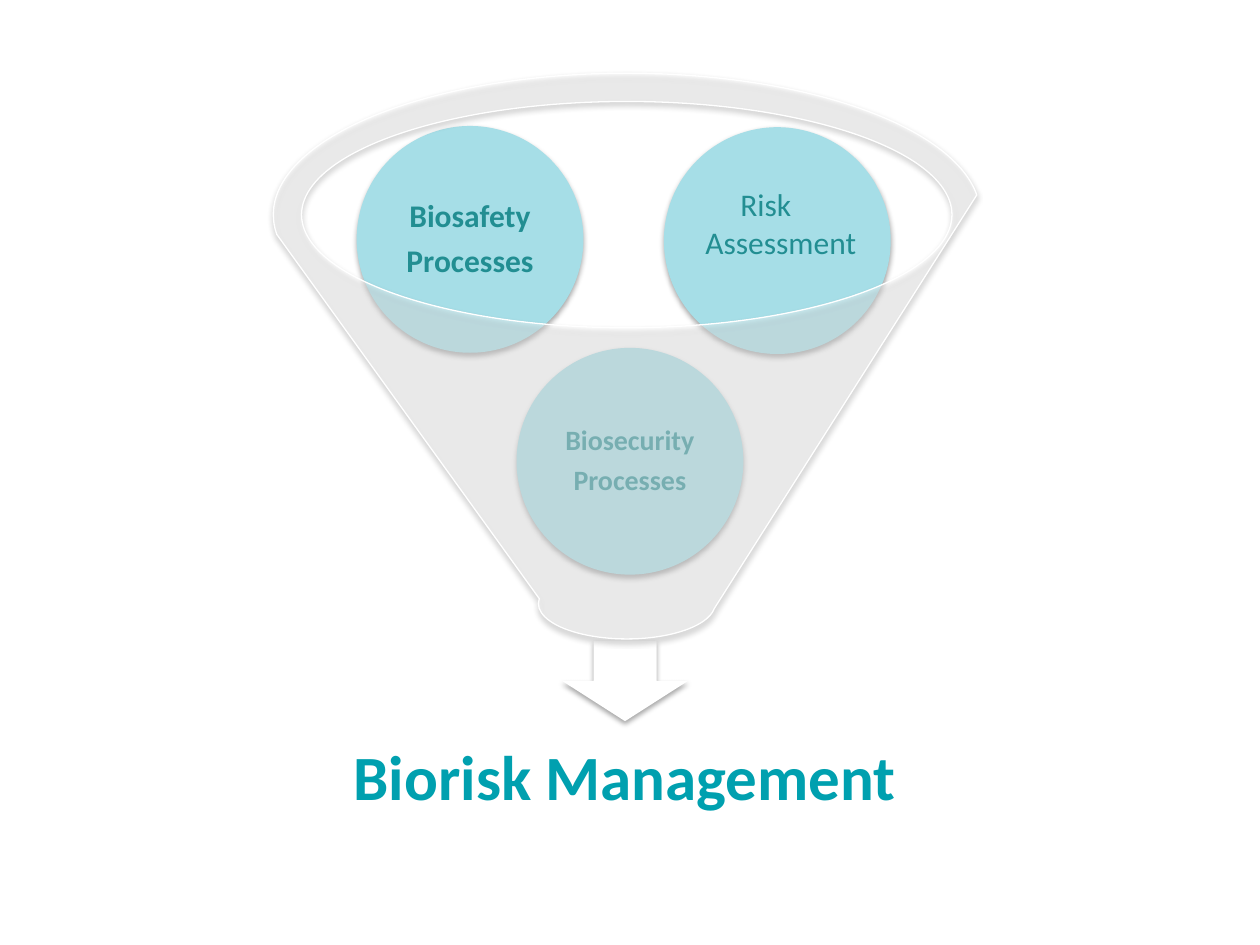
import pptx
import pptx.util
import pptx.oxml
from pptx.dml.color import RGBColor
from pptx.enum.shapes import MSO_SHAPE
from pptx.enum.text import MSO_ANCHOR, PP_ALIGN
from pptx.oxml.ns import nsdecls, qn
from lxml import etree

Pt = pptx.util.Pt


class Theme:
    font = "Calibri"
    white = RGBColor.from_string("FFFFFF")
    ball = RGBColor.from_string("A6DEE7")
    label = RGBColor.from_string("228E92")
    title = RGBColor.from_string("00A0AF")
    glass = 40  # opacity of the funnel, percent
    title_size, label_size, small_size = 36, 18, 16


SHADOW = (
    f'<a:effectLst {nsdecls("a")}>'
    '<a:outerShdw blurRad="39370" dist="22860" dir="5400000" rotWithShape="0">'
    '<a:srgbClr val="000000"><a:alpha val="35000"/></a:srgbClr>'
    "</a:outerShdw></a:effectLst>"
)


def add_shape(s, kind, box, color, opacity=None, line=None, shadow=True):
    sp = s.shapes.add_shape(kind, *map(Pt, box))
    sp.fill.solid()
    sp.fill.fore_color.rgb = color
    if opacity is not None:
        clr = sp._element.spPr.find(qn("a:solidFill"))[0]
        etree.SubElement(clr, qn("a:alpha")).set("val", str(opacity * 1000))
    if line is None:
        sp.line.fill.background()
    else:
        sp.line.color.rgb = line
        sp.line.width = Pt(0.75)
    if shadow:
        sp._element.spPr.append(pptx.oxml.parse_xml(SHADOW))
    else:
        sp.shadow.inherit = False
    return sp


def set_text(sp, lines, inset, font, para=None, anchor=MSO_ANCHOR.MIDDLE):
    tf = sp.text_frame
    frame = dict.fromkeys(
        ("margin_left", "margin_top", "margin_right", "margin_bottom"), Pt(inset))
    frame.update(word_wrap=True, vertical_anchor=anchor)
    for name, value in frame.items():
        setattr(tf, name, value)
    for i, line in enumerate(lines):
        p = tf.paragraphs[0] if i == 0 else tf.add_paragraph()
        for name, value in (para or {}).items():
            setattr(p, name, value)
        r = p.add_run()
        r.text = line
        for name, value in {"name": Theme.font, **font, "size": Pt(font["size"])}.items():
            if name == "color":
                r.font.color.rgb = value
            else:
                setattr(r.font, name, value)
    return tf


def centred(size):
    return {"alignment": PP_ALIGN.CENTER, "line_spacing": 0.9,
            "space_after": Pt(0.35 * size)}


def draw_funnel(s, x, y, w, h):
    # Rim and outlet arrow, behind the balls
    add_shape(s, MSO_SHAPE.OVAL, (x + 14, y + 7, 372, 130), Theme.white,
              Theme.glass, shadow=False)
    add_shape(s, MSO_SHAPE.DOWN_ARROW, (x + w / 2 - 37, y + h + 1, 72, 46), Theme.white)

    # Balls
    diameter = 129.6
    balls = [
        (139, 157, Theme.small_size, ["Biosecurity", "Processes"]),
        (47.6, 30.2, Theme.label_size, ["Biosafety", "Processes"]),
        (223.2, 30.9, Theme.label_size, []),
    ]
    for dx, dy, size, lines in balls:
        sp = add_shape(s, MSO_SHAPE.OVAL, (x + dx, y + dy, diameter, diameter), Theme.ball)
        if lines:
            set_text(sp, lines, 2, {"size": size, "bold": True, "color": Theme.label},
                     centred(size))

    # Translucent funnel over the balls
    add_shape(s, MSO_SHAPE.FUNNEL, (x, y, w, h), Theme.white, Theme.glass, Theme.white)

    # Label of the right-hand ball, above the funnel
    sp = s.shapes.add_textbox(*map(Pt, (x + 239.8, y + 60.4, 258, 51)))
    tf = set_text(sp, ["Risk", "Assessment"], 3.6,
                  {"size": Theme.label_size, "color": Theme.label},
                  anchor=MSO_ANCHOR.TOP)
    tf.margin_left = tf.margin_right = Pt(7.2)
    tf.paragraphs[0]._p.get_or_add_pPr().set("indent", str(Pt(20)))


def draw_caption(s, x, y, w, h):
    sp = s.shapes.add_textbox(*map(Pt, (x, y, w, h)))
    set_text(sp, ["Biorisk Management"], 20,
             {"size": Theme.title_size, "bold": True, "color": Theme.title},
             centred(Theme.title_size))


def main():
    prs = pptx.Presentation()
    prs.slide_width, prs.slide_height = Pt(720), Pt(540)
    s = prs.slides.add_slide(prs.slide_layouts[6])
    draw_caption(s, 132, 402.5, 450, 86.4)
    draw_funnel(s, 156.2, 41.8, 404, 323.3)
    prs.save("out.pptx")


if __name__ == "__main__":
    main()
